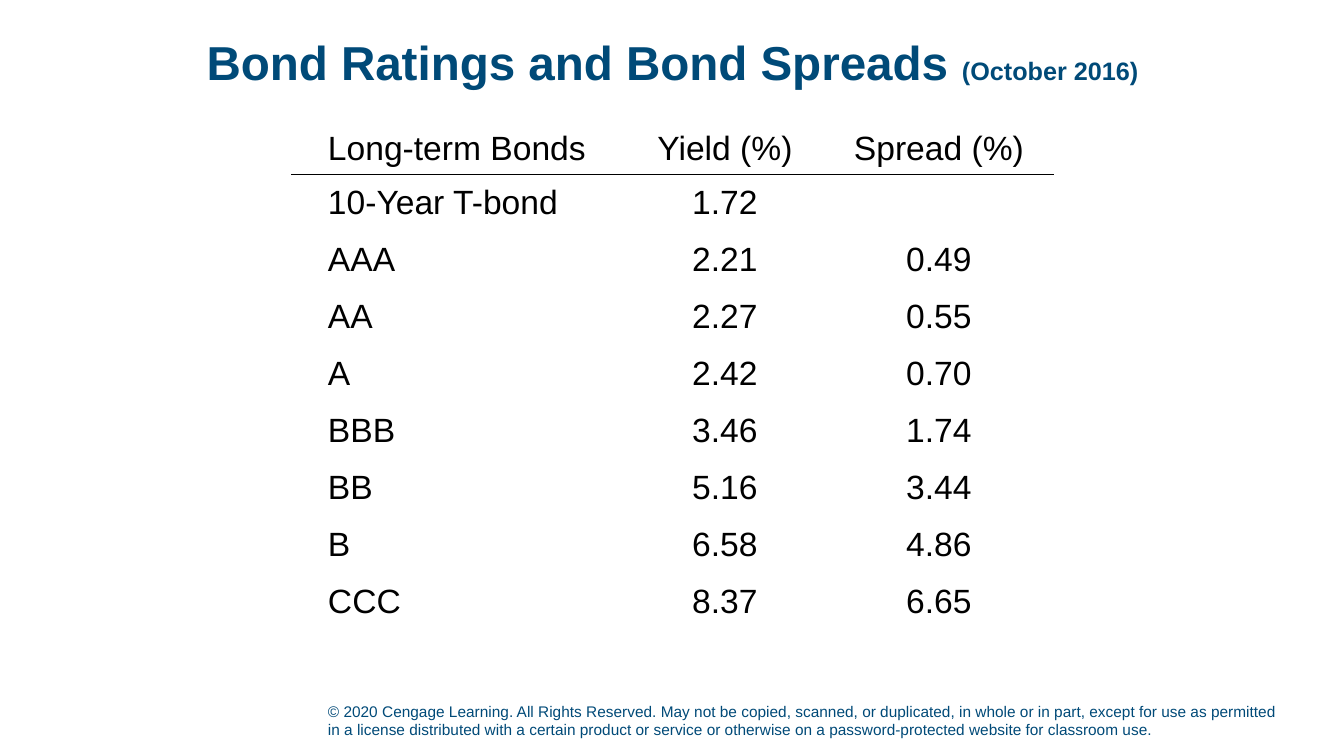
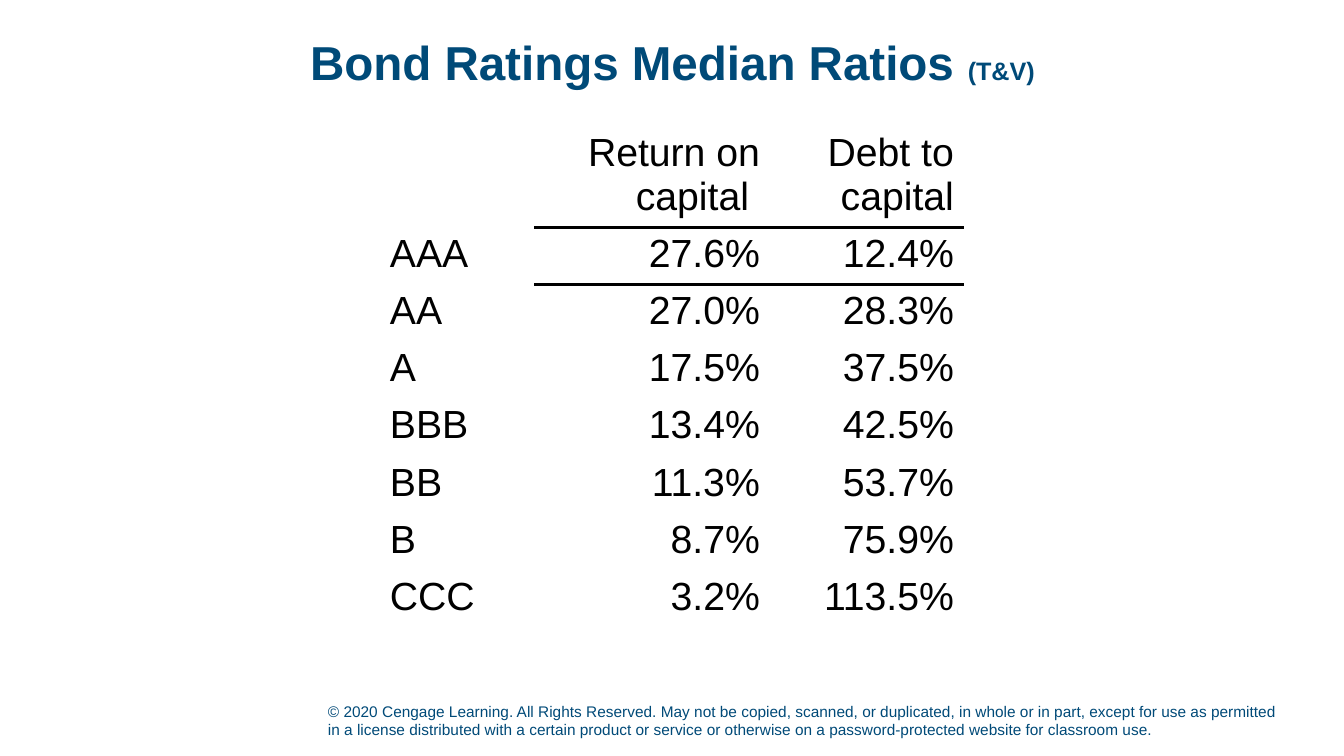
from lxml import etree
from pptx import Presentation
from pptx import util as u
from pptx.dml.color import RGBColor
from pptx.enum import text
from pptx.oxml import ns

# Content
FOOTER = ("© 2020 Cengage Learning. All Rights Reserved. May not be copied, "
          "scanned, or duplicated, in whole or in part, except for use as "
          "permitted in a license distributed with a certain product or "
          "service or otherwise on a password-protected website for "
          "classroom use.")
LEFT, CENTER, RIGHT = (text.PP_ALIGN.LEFT, text.PP_ALIGN.CENTER,
                       text.PP_ALIGN.RIGHT)
TOP, MIDDLE, BOTTOM = (text.MSO_ANCHOR.TOP, text.MSO_ANCHOR.MIDDLE,
                       text.MSO_ANCHOR.BOTTOM)
SLIDES = [
    {
        "title": "Bond Ratings and Bond Spreads ",
        "note": "(October 2016)",
        "rows": [
            ("Long-term Bonds", "Yield (%)", "Spread (%)"),
            ("10-Year T-bond", "1.72", ""),
            ("AAA", "2.21", "0.49"),
            ("AA", "2.27", "0.55"),
            ("A", "2.42", "0.70"),
            ("BBB", "3.46", "1.74"),
            ("BB", "5.16", "3.44"),
            ("B", "6.58", "4.86"),
            ("CCC", "8.37", "6.65"),
        ],
        "corner": (292, 124), "columns": (333, 200, 228), "header": 50,
        "size": 24, "align": CENTER, "anchor": MIDDLE,
        "label_inset": 36, "header_bottom": 5, "rule": 1,
    },
    {
        "title": "Bond Ratings Median Ratios ",
        "note": "(T&V)",
        "rows": [
            ("", "Return on capital ", "Debt to capital"),
            ("AAA", "27.6%", "12.4%"),
            ("AA", "27.0%", "28.3%"),
            ("A", "17.5%", "37.5%"),
            ("BBB", "13.4%", "42.5%"),
            ("BB", "11.3%", "53.7%"),
            ("B", "8.7%", "75.9%"),
            ("CCC", "3.2%", "113.5%"),
        ],
        "corner": (380, 126), "columns": (155, 235, 194), "header": 97,
        "size": 28, "align": RIGHT, "anchor": TOP,
        "label_inset": 10, "header_bottom": 2, "rule": 2.25,
    },
]

# Shared style
NAVY = RGBColor(0x00, 0x4A, 0x78)
BLACK = RGBColor(0x00, 0x00, 0x00)
FONT = "Arial"
SLIDE_SIZE = (1344, 756)
TITLE_BOX = (93, 15, 1159, 101)
FOOTER_BOX = (318, 694, 971, 50)
ROW_HEIGHT = 57
TITLE_ONLY = 5


def px(length):
    return u.Emu(round(length * 914400 / 100.8))


def style(paragraph, color, size=None, bold=False, align=LEFT):
    paragraph.alignment = align
    font = paragraph.font
    font.name, font.bold, font.color.rgb = FONT, bold, color
    if size:
        font.size = u.Pt(size)


def add_title(slide, title, note):
    shape = slide.shapes.title
    shape.left, shape.top, shape.width, shape.height = map(px, TITLE_BOX)
    frame = shape.text_frame
    frame.auto_size = text.MSO_AUTO_SIZE.NONE
    frame.vertical_anchor = MIDDLE
    paragraph = frame.paragraphs[0]
    paragraph.line_spacing = 0.9
    style(paragraph, NAVY, bold=True, align=CENTER)
    for words, size in ((title, 34), (note, 18)):
        run = paragraph.add_run()
        run.text, run.font.size = words, u.Pt(size)


def add_footer(slide):
    frame = slide.shapes.add_textbox(*map(px, FOOTER_BOX)).text_frame
    frame.word_wrap = True
    frame.vertical_anchor = BOTTOM
    frame.text = FOOTER
    style(frame.paragraphs[0], NAVY, 11)


def add_rule(cell, side, width):
    """Draw one cell border; borders come before the fill in the XML."""
    line = etree.Element(ns.qn("a:" + side), w=str(u.Pt(width)))
    fill = etree.SubElement(line, ns.qn("a:solidFill"))
    etree.SubElement(fill, ns.qn("a:srgbClr"), val=str(BLACK))
    cell._tc.get_or_add_tcPr().insert(0, line)


def add_ratings_table(slide, data):
    rows, columns = data["rows"], data["columns"]
    height = data["header"] + ROW_HEIGHT * (len(rows) - 1)
    table = slide.shapes.add_table(
        len(rows), len(columns), *map(px, data["corner"]),
        px(sum(columns)), px(height)).table
    table.first_row = table.horz_banding = False
    for column, width in zip(table.columns, columns):
        column.width = px(width)
    for r, values in enumerate(rows):
        table.rows[r].height = px(ROW_HEIGHT if r else data["header"])
        for c, value in enumerate(values):
            cell = table.cell(r, c)
            cell.fill.background()
            cell.vertical_anchor = data["anchor"]
            cell.margin_left = px(10 if c else data["label_inset"])
            cell.margin_bottom = px(5 if r else data["header_bottom"])
            cell.text = value
            style(cell.text_frame.paragraphs[0], BLACK, data["size"],
                  align=data["align"] if c else LEFT)
            # The rule runs under every column that has a heading
            if r < 2 and rows[0][c]:
                add_rule(cell, "lnT" if r else "lnB", data["rule"])


def main():
    presentation = Presentation()
    presentation.slide_width, presentation.slide_height = map(px, SLIDE_SIZE)
    for data in SLIDES:
        slide = presentation.slides.add_slide(
            presentation.slide_layouts[TITLE_ONLY])
        add_footer(slide)
        add_title(slide, data["title"], data["note"])
        add_ratings_table(slide, data)
    presentation.save("out.pptx")


if __name__ == "__main__":
    main()
